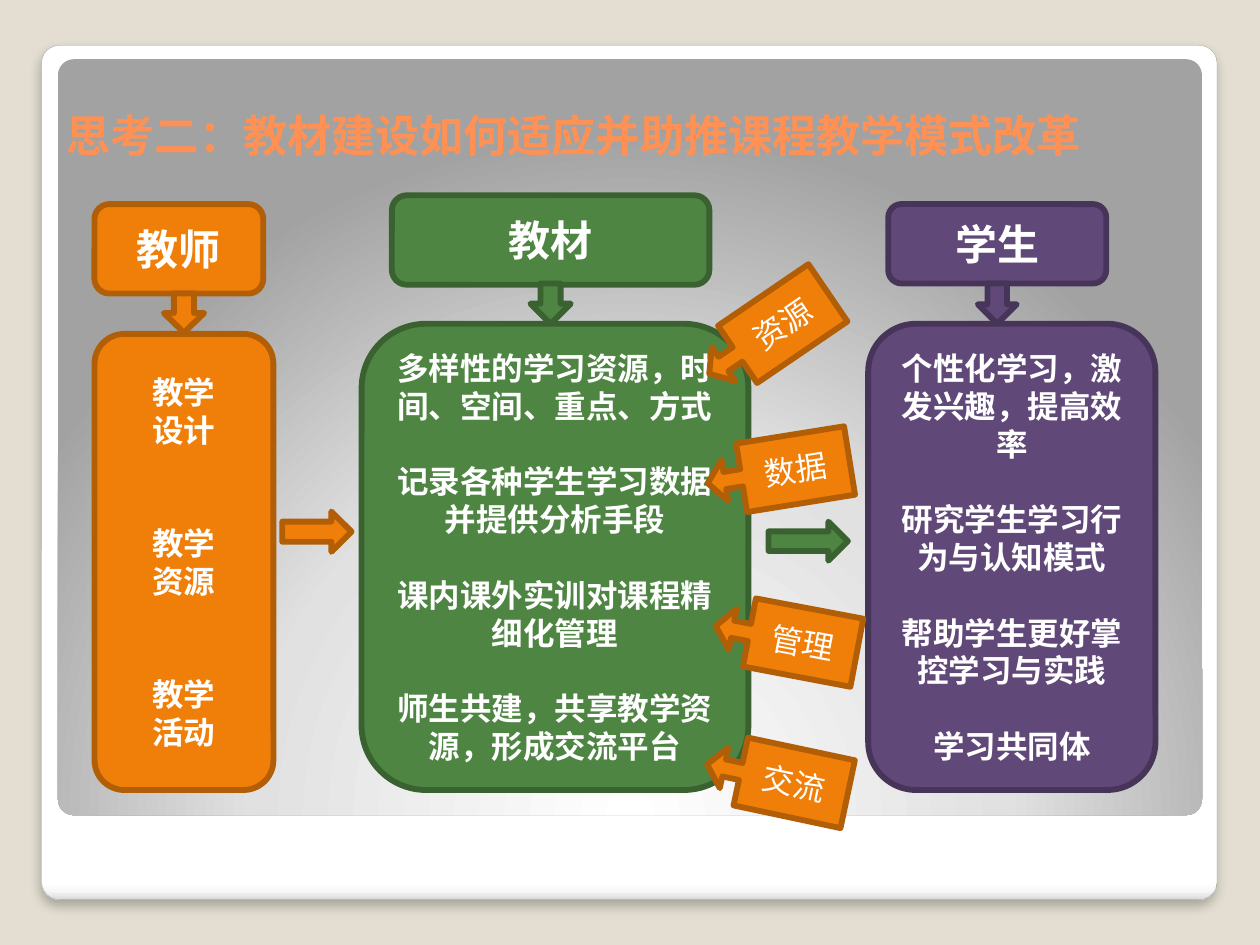
from pptx import Presentation
from pptx.dml.color import RGBColor
from pptx.enum.shapes import MSO_SHAPE as Preset
from pptx.enum.text import MSO_ANCHOR as Anchor, MSO_AUTO_SIZE as AutoSize, PP_ALIGN as Align
from pptx.oxml import parse_xml
from pptx.oxml.ns import nsdecls, qn
from pptx.util import Inches, Pt
from lxml.etree import SubElement

FONT = "DejaVu Sans"
COLORS = {
    "background": "E3DED1", "frame": "A4A4A4", "title": "FF9155", "white": "FFFFFF",
    "teacher": "F07F09", "teacher_edge": "B25E07",
    "textbook": "4E8542", "textbook_edge": "3A6231",
    "student": "604878", "student_edge": "473559",
}

deck = Presentation()
deck.slide_width, deck.slide_height = Inches(10), Inches(7.5)
COL, ROW = deck.slide_width / 100, deck.slide_height / 75
slide = deck.slides.add_slide(deck.slide_layouts[5])
slide.background.fill.solid()
slide.background.fill.fore_color.rgb = RGBColor.from_string(COLORS["background"])


def write(frame, text, size=18, bold=True, color="white", align=Align.CENTER, gap=0):
    frame.word_wrap = True
    frame.vertical_anchor = Anchor.MIDDLE
    groups = [group.split("\n") for group in text.split("\n\n")]
    lines = [(line, i > 0 and j == 0) for i, group in enumerate(groups) for j, line in enumerate(group)]
    for number, (line, opens_group) in enumerate(lines):
        paragraph = frame.add_paragraph() if number else frame.paragraphs[0]
        paragraph.alignment = align
        if opens_group:
            paragraph.space_before = Pt(gap)
        run = paragraph.add_run()
        run.text = line
        run.font.name, run.font.size, run.font.bold = FONT, Pt(size), bold
        run.font.color.rgb = RGBColor.from_string(COLORS[color])
        SubElement(run.font._element, qn("a:ea")).set("typeface", FONT)


def place(preset, left, top, width, height, role=None):
    shape = slide.shapes.add_shape(
        preset, round(left * COL), round(top * ROW), round(width * COL), round(height * ROW))
    shape.shadow.inherit = False
    if role:
        shape.fill.solid()
        shape.fill.fore_color.rgb = RGBColor.from_string(COLORS[role])
        shape.line.color.rgb = RGBColor.from_string(COLORS[role + "_edge"])
        shape.line.width = Pt(3.35)
    return shape


frame_panel = place(Preset.ROUNDED_RECTANGLE, 3.3, 3.6, 93.3, 67.8)
glow_panel = place(Preset.ROUNDED_RECTANGLE, 4.6, 4.7, 90.8, 60)
gradients = [
    (frame_panel, [(0, "FFFFFF"), (98, "FFFFFF"), (99, "F7F7F7"), (100, "DADADA")],
     '<a:lin ang="5400000" scaled="0"/>'),
    (glow_panel, [(0, "FFFFFF"), (55, "E1E1E1"), (100, "A2A2A2")],
     '<a:path path="circle"><a:fillToRect l="50000" t="175000" r="50000" b="-75000"/></a:path>'),
]
for panel, stops, direction in gradients:
    panel.adjustments[0] = 0.021
    panel.fill.background()
    panel.line.fill.background()
    stop_list = "".join(
        f'<a:gs pos="{share * 1000}"><a:srgbClr val="{color}"/></a:gs>' for share, color in stops)
    properties = panel.element.spPr
    properties.replace(properties.find(qn("a:noFill")), parse_xml(
        f'<a:gradFill {nsdecls("a")} rotWithShape="1"><a:gsLst>{stop_list}</a:gsLst>{direction}</a:gradFill>'))
frame_panel.line.color.rgb = RGBColor.from_string(COLORS["frame"])
frame_panel.line.width = Pt(0.16)
frame_panel.element.spPr.find(qn("a:effectLst")).append(parse_xml(
    f'<a:outerShdw {nsdecls("a")} blurRad="{Pt(6)}" dist="{Pt(4)}" dir="5400000" algn="tl" rotWithShape="0">'
    '<a:srgbClr val="000000"><a:alpha val="25000"/></a:srgbClr></a:outerShdw>'))

title = slide.shapes.title
title.left, title.top = round(5.3 * COL), round(7.7 * ROW)
title.width, title.height = round(86 * COL), round(6 * ROW)
title_frame = title.text_frame
title_frame.auto_size = AutoSize.NONE
title_frame.margin_left = title_frame.margin_right = title_frame.margin_top = title_frame.margin_bottom = 0
write(title_frame, "思考二：教材建设如何适应并助推课程教学模式改革", size=25.2, color="title", align=Align.LEFT)
glow_panel.element.addnext(title.element)

bodies = [
    ("teacher", (7.5, 26.5, 14.2, 36.2), 43.2,
     "教学\n设计\n\n教学\n资源\n\n教学\n活动"),
    ("textbook", (28.7, 25.7, 30.7, 37), 21.6,
     "多样性的学习资源，时间、空间、重点、方式\n\n记录各种学生学习数据并提供分析手段\n\n"
     "课内课外实训对课程精细化管理\n\n师生共建，共享教学资源，形成交流平台"),
    ("student", (68.9, 25.7, 22.8, 37), 21.6,
     "个性化学习，激发兴趣，提高效率\n\n研究学生学习行为与认知模式\n\n"
     "帮助学生更好掌控学习与实践\n\n学习共同体"),
]
for role, area, gap, points in bodies:
    write(place(Preset.ROUNDED_RECTANGLE, *area, role).text_frame, points, gap=gap)

headings = [
    ("teacher", "教师", (7.5, 16.2, 13.4, 7.1)),
    ("textbook", "教材", (31.1, 15.5, 25.2, 7.1)),
    ("student", "学生", (70.5, 16.2, 17.3, 6.3)),
]
for role, heading, area in headings:
    write(place(Preset.ROUNDED_RECTANGLE, *area, role).text_frame, heading, size=24)

arrows = [
    (Preset.RIGHT_ARROW, "teacher", (22.4, 40.6, 5.5, 3.2)),
    (Preset.RIGHT_ARROW, "textbook", (61, 41.4, 6.3, 3.1)),
    (Preset.DOWN_ARROW, "teacher", (13, 23.3, 3.2, 3.1)),
    (Preset.DOWN_ARROW, "textbook", (42.1, 22.5, 3.2, 3.2)),
    (Preset.DOWN_ARROW, "student", (77.6, 22.5, 3.1, 3.2)),
]
for preset, role, area in arrows:
    place(preset, *area, role)

labels = [
    ("资源", 55.3, 23.7, -34.3), ("数据", 56.1, 34.7, -9.1),
    ("管理", 56.7, 48, 10.7), ("交流", 56, 59.1, 12),
]
for label, left, top, angle in labels:
    callout = place(Preset.LEFT_ARROW_CALLOUT, left, top, 11.4, 5.5, "teacher")
    for index, share in enumerate((0.25, 0.299, 0.25, 0.761)):
        callout.adjustments[index] = share
    callout.rotation = angle
    write(callout.text_frame, label, bold=False)

deck.save("out.pptx")
